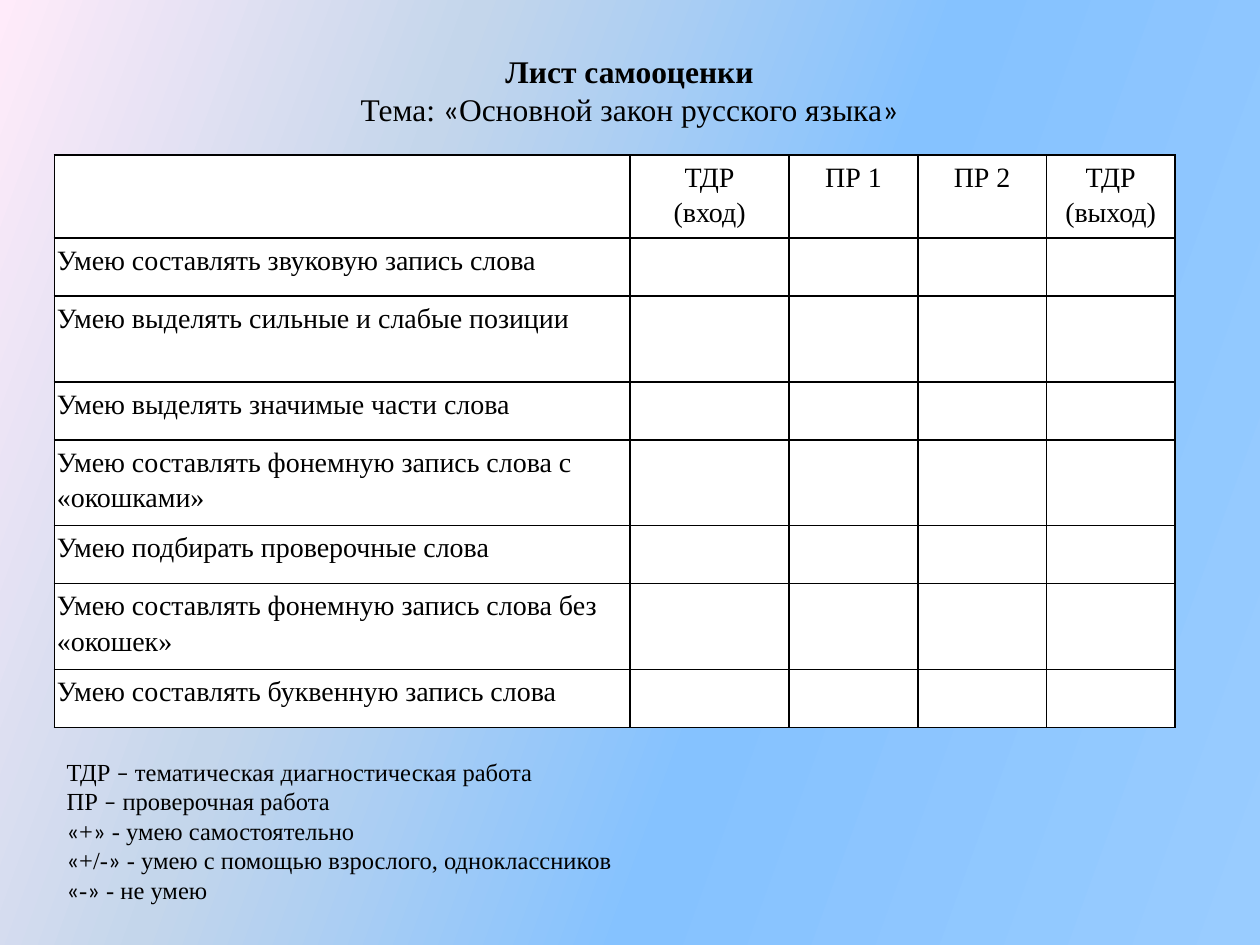
"""Build the self-assessment sheet slide for a Russian language lesson."""
from dataclasses import dataclass
from itertools import groupby

from lxml.etree import SubElement
from pptx import Presentation
from pptx.dml.color import RGBColor
from pptx.enum.text import MSO_ANCHOR, MSO_AUTO_SIZE, PP_ALIGN
from pptx.oxml.ns import qn
from pptx.util import Pt


@dataclass(frozen=True)
class Theme:
    """Colours, fonts and type sizes of the slide."""
    ink: str = "000000"
    paper: str = "FFFFFF"
    gradient: tuple = ((0, "99CCFF"), (40, "85C2FF"), (70, "C4D6EB"), (100, "FFEBFA"))
    gradient_angle: int = 160
    body_font: str = "Times New Roman"
    mark_font: str = "Calibri"
    title_size: int = 18
    table_size: int = 16
    legend_size: int = 14
    border: int = 1


THEME = Theme()
MARKS = "«»–"
LEFT = 31
TITLE = ("Лист самооценки", "Тема: «Основной закон русского языка»")
STAGES = ("ТДР\n(вход)", "ПР 1", "ПР 2", "ТДР\n(выход)")
SKILLS = (
    "Умею составлять звуковую запись слова",
    "Умею выделять сильные и слабые позиции",
    "Умею выделять значимые части слова",
    "Умею составлять фонемную запись слова с «окошками»",
    "Умею подбирать проверочные слова",
    "Умею составлять фонемную запись слова без «окошек»",
    "Умею составлять буквенную запись слова",
)
LEGEND = (
    "ТДР – тематическая диагностическая работа",
    "ПР – проверочная работа",
    "«+» - умею самостоятельно",
    "«+/-» - умею с помощью взрослого, одноклассников",
    "«-» - не умею",
)
COLUMN_WIDTHS = (329, 91, 73.5, 73.5, 73.5)
SINGLE_ROW, DOUBLE_ROW = 33.2, 49
ROW_HEIGHTS = (47.5,) + (SINGLE_ROW, DOUBLE_ROW) * 3 + (SINGLE_ROW,)


def add_run(paragraph, text, size, font=THEME.body_font, bold=False):
    """Append one formatted run."""
    run = paragraph.add_run()
    run.text = text
    run.font.name = font
    run.font.size = Pt(size)
    run.font.bold = bold
    run.font.color.rgb = RGBColor.from_string(THEME.ink)


def add_marked_runs(paragraph, text, size, bold=False):
    """Append runs, giving quotation marks and dashes their own font."""
    for is_mark, letters in groupby(text, key=lambda letter: letter in MARKS):
        font = THEME.mark_font if is_mark else THEME.body_font
        add_run(paragraph, "".join(letters), size, font, bold)


def fill_lines(frame, lines, size, align=PP_ALIGN.LEFT, bold_first=False):
    """Write each line as a paragraph of the text frame."""
    frame.word_wrap = True
    frame.auto_size = MSO_AUTO_SIZE.SHAPE_TO_FIT_TEXT
    for index, line in enumerate(lines):
        paragraph = frame.add_paragraph() if index else frame.paragraphs[0]
        paragraph.alignment = align
        add_marked_runs(paragraph, line, size, bold_first and index == 0)


def paint_background(slide):
    """Give the slide its diagonal gradient."""
    fill = slide.background.fill
    fill.gradient()
    fill.gradient_angle = THEME.gradient_angle
    stops = next(slide.element.iter(qn("a:gsLst")))
    for stop in list(stops):
        stops.remove(stop)
    for percent, color in THEME.gradient:
        stop = SubElement(stops, qn("a:gs"), pos=str(percent * 1000))
        SubElement(stop, qn("a:srgbClr"), val=color)


def add_heading(slide):
    """Place the sheet name and topic in the title placeholder."""
    heading = slide.shapes.title
    heading.left, heading.top, heading.width, heading.height = Pt(LEFT), Pt(26), Pt(657.5), Pt(51)
    heading.text_frame.vertical_anchor = MSO_ANCHOR.TOP
    fill_lines(heading.text_frame, TITLE, THEME.title_size, PP_ALIGN.CENTER, bold_first=True)


def style_cell(cell):
    """Draw the cell's borders and fill it."""
    properties = cell._tc.get_or_add_tcPr()
    for side in ("a:lnL", "a:lnR", "a:lnT", "a:lnB"):
        line = SubElement(properties, qn(side), w=str(Pt(THEME.border)))
        color = SubElement(line, qn("a:solidFill"))
        SubElement(color, qn("a:srgbClr"), val=THEME.ink)
    cell.fill.solid()
    cell.fill.fore_color.rgb = RGBColor.from_string(THEME.paper)


def write_cell(cell, text, align):
    """Write the cell text, breaking lines where the text does."""
    cell.margin_left = cell.margin_right = cell.margin_top = cell.margin_bottom = Pt(1.5)
    paragraph = cell.text_frame.paragraphs[0]
    paragraph.alignment = align
    paragraph.line_spacing = 1.15
    paragraph.space_after = Pt(10)
    for index, line in enumerate(text.split("\n")):
        if index:
            paragraph.add_line_break()
        add_run(paragraph, line, THEME.table_size)


def add_skill_table(slide):
    """Add the grid of skills against assessment stages."""
    table = slide.shapes.add_table(
        len(ROW_HEIGHTS), len(COLUMN_WIDTHS), Pt(LEFT), Pt(88.5),
        Pt(sum(COLUMN_WIDTHS)), Pt(sum(ROW_HEIGHTS))).table
    table.first_row = table.horz_banding = False
    for column, width in zip(table.columns, COLUMN_WIDTHS):
        column.width = Pt(width)
    for row, height in zip(table.rows, ROW_HEIGHTS):
        row.height = Pt(height)
    for cell in table.iter_cells():
        style_cell(cell)
    for index, stage in enumerate(STAGES, start=1):
        write_cell(table.cell(0, index), stage, PP_ALIGN.CENTER)
    for index, skill in enumerate(SKILLS, start=1):
        write_cell(table.cell(index, 0), skill, PP_ALIGN.LEFT)


def add_legend(slide):
    """Explain the abbreviations and marks below the table."""
    legend = slide.shapes.add_textbox(Pt(LEFT), Pt(428.5), Pt(720), Pt(92))
    legend.text_frame.vertical_anchor = MSO_ANCHOR.MIDDLE
    fill_lines(legend.text_frame, LEGEND, THEME.legend_size)


def main():
    """Build and save the slide."""
    presentation = Presentation()
    presentation.slide_width, presentation.slide_height = Pt(720), Pt(540)
    slide = presentation.slides.add_slide(presentation.slide_layouts.get_by_name("Title Only"))
    paint_background(slide)
    add_legend(slide)
    add_heading(slide)
    add_skill_table(slide)
    presentation.save("out.pptx")


if __name__ == "__main__":
    main()
